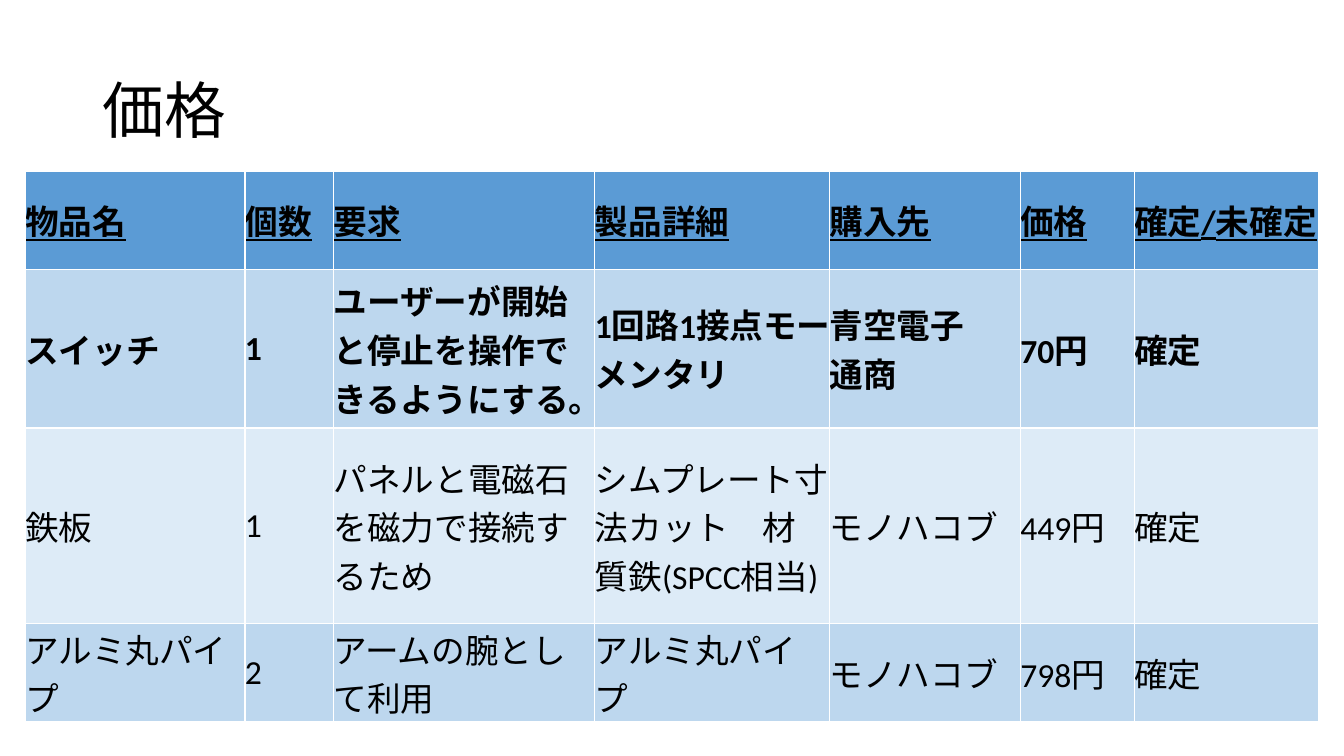
import itertools

import pptx
import pptx.dml.color
import pptx.enum.lang
import pptx.enum.text
import pptx.oxml
import pptx.oxml.ns
import pptx.util
from lxml import etree

EMU_PER_PX = 9144
LATIN, JAPANESE = "Calibri", "Noto Sans CJK JP"
COLORS = {
    "text": "000000",
    "border": "FFFFFF",
    "header": "5B9BD5",
    "dark_band": "BDD7EE",
    "light_band": "DDEBF7",
}
COLUMN_WIDTHS = [218, 88, 259, 233, 189, 113, 183]
ROWS = [
    (97, "header", {"bold": True, "underline": True},
     ["物品名", "個数", "要求", "製品詳細", "購入先", "価格", "確定/未確定"]),
    (158, "dark_band", {"bold": True},
     ["スイッチ", "1", "ユーザーが開始と停止を操作できるようにする。",
      "1回路1接点モーメンタリ", "青空電子\n通商", "70円", "確定"]),
    (194, "light_band", {"bold": False},
     ["鉄板", "1", "パネルと電磁石を磁力で接続するため",
      "シムプレート寸法カット　材質鉄(SPCC相当)", "モノハコブ", "449円", "確定"]),
    (97, "dark_band", {"bold": False},
     ["アルミ丸パイプ", "2", "アームの腕として利用", "アルミ丸パイプ", "モノハコブ", "798円", "確定"]),
]
THICK_RULE_BELOW_ROW = 1
PIPE_DETAIL_CELL = (3, 3)


def px(length):
    """Turn a length in px into EMU."""
    return pptx.util.Emu(length * EMU_PER_PX)


def rgb(name):
    """Look up a named colour."""
    return pptx.dml.color.RGBColor.from_string(COLORS[name])


def write_text(text_frame, text, font_format):
    """Write one paragraph a line, with Latin and Japanese letters in separate runs."""
    for index, line in enumerate(text.split("\n")):
        paragraph = text_frame.add_paragraph() if index else text_frame.paragraphs[0]
        for is_latin, letters in itertools.groupby(line, str.isascii):
            run = paragraph.add_run()
            run.text = "".join(letters)
            run.font.color.rgb = rgb("text")
            values = {
                "name": LATIN if is_latin else JAPANESE,
                "language_id": pptx.enum.lang.MSO_LANGUAGE_ID.JAPANESE,
                **font_format,
            }
            for attribute, value in values.items():
                setattr(run.font, attribute, value)
            east_asian = etree.SubElement(run.font._element, pptx.oxml.ns.qn("a:ea"))
            east_asian.set("typeface", JAPANESE)


def add_borders(cell, row_index):
    """Draw the four white borders of a cell."""
    properties = cell._tc.get_or_add_tcPr()
    thick_sides = {THICK_RULE_BELOW_ROW: "B", THICK_RULE_BELOW_ROW + 1: "T"}
    for side in "LRTB":
        width = 1.5 if thick_sides.get(row_index) == side else 1
        properties.append(pptx.oxml.parse_xml(
            f'<a:ln{side} {pptx.oxml.ns.nsdecls("a")} w="{pptx.util.Pt(width)}">'
            f'<a:solidFill><a:srgbClr val="{COLORS["border"]}"/></a:solidFill></a:ln{side}>'))


def add_title(slide, left, top, width, height):
    """Place the slide title in the given box."""
    shape = slide.shapes.add_textbox(px(left), px(top), px(width), px(height))
    text_frame = shape.text_frame
    text_frame.word_wrap = True
    text_frame.vertical_anchor = pptx.enum.text.MSO_ANCHOR.MIDDLE
    write_text(text_frame, "価格", {"name": LATIN, "size": pptx.util.Pt(44)})
    text_frame.paragraphs[0].line_spacing = 0.9


def add_price_table(slide, left, top, width, height):
    """Place the table of parts and prices in the given box."""
    table = slide.shapes.add_table(
        len(ROWS), len(COLUMN_WIDTHS), px(left), px(top), px(width), px(height)).table
    for column, column_width in zip(table.columns, COLUMN_WIDTHS):
        column.width = px(column_width)
    cell_format = {
        "margin_left": 0,
        "margin_right": 0,
        "margin_top": 0,
        "margin_bottom": 0,
        "vertical_anchor": pptx.enum.text.MSO_ANCHOR.MIDDLE,
    }
    for row_index, (row_height, fill, font_format, texts) in enumerate(ROWS):
        table.rows[row_index].height = px(row_height)
        for cell, text in zip(table.rows[row_index].cells, texts):
            for attribute, value in cell_format.items():
                setattr(cell, attribute, value)
            add_borders(cell, row_index)
            cell.fill.solid()
            cell.fill.fore_color.rgb = rgb(fill)
            write_text(cell.text_frame, text, {"size": pptx.util.Pt(24), **font_format})
    table.cell(*PIPE_DETAIL_CELL).margin_right = px(5)


def main():
    """Build the price slide and save it."""
    presentation = pptx.Presentation()
    presentation.slide_width, presentation.slide_height = px(1333), px(750)
    slide = presentation.slides.add_slide(presentation.slide_layouts[6])
    add_title(slide, 92, 40, 1150, 145)
    add_price_table(slide, 25, 170, sum(COLUMN_WIDTHS), sum(row[0] for row in ROWS))
    presentation.save("out.pptx")


if __name__ == "__main__":
    main()
